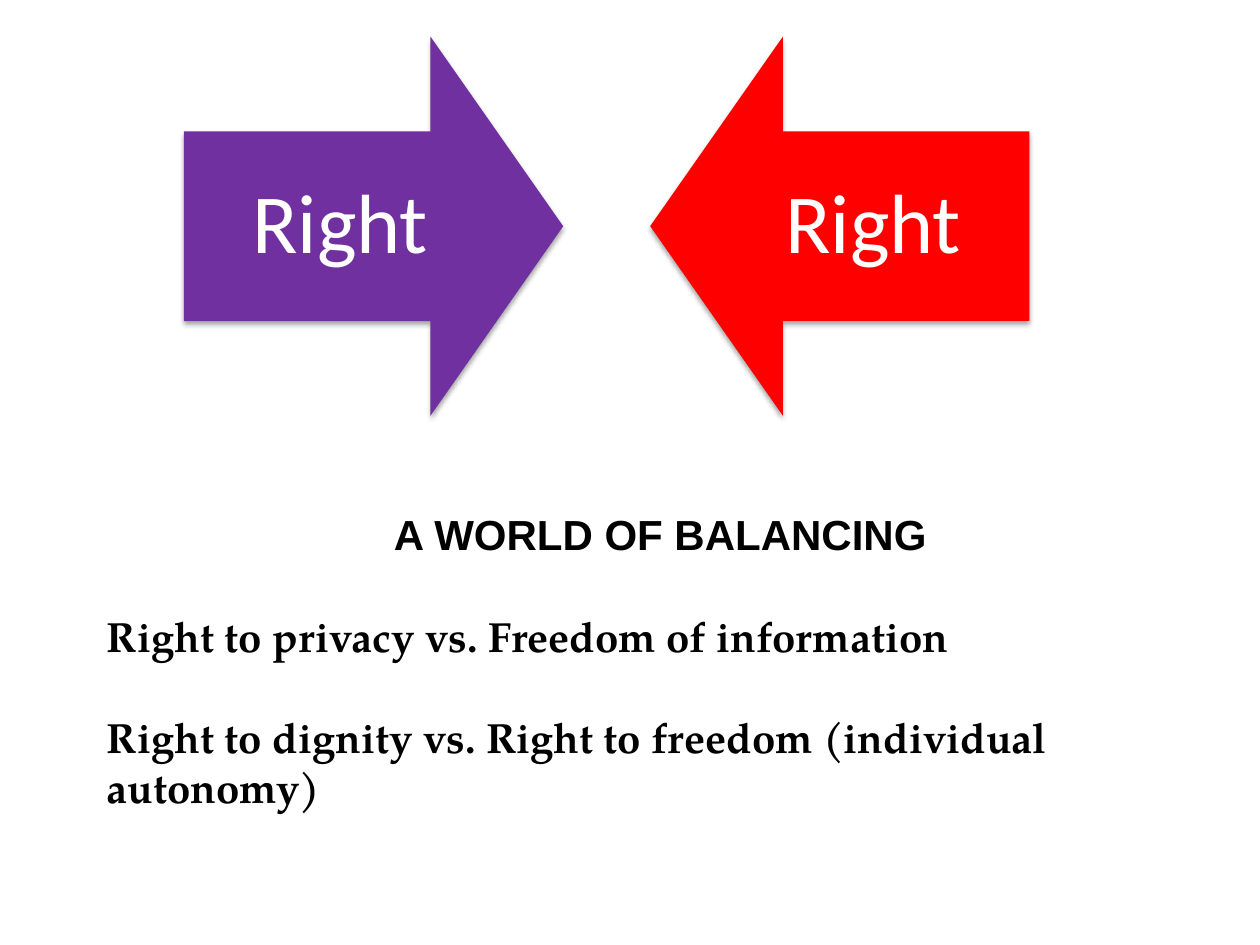
import pptx
import pptx.util
import pptx.dml.color
import pptx.enum.shapes
import pptx.enum.text
import pptx.oxml
import pptx.oxml.ns
from pptx.util import Inches

ARROW_SIZE = 3.01
ARROW_TOP = 0.29
LABEL_WIDTH = 2.48
LABEL_HEIGHT = 1.5
ALIGN = pptx.enum.text.PP_ALIGN

SHADOW_XML = (
    f'<a:effectLst {pptx.oxml.ns.nsdecls("a")}>'
    '<a:outerShdw blurRad="39400" dist="22900" dir="5400000" rotWithShape="0">'
    '<a:srgbClr val="000000"><a:alpha val="35000"/></a:srgbClr>'
    '</a:outerShdw></a:effectLst>'
)


def color(value):
    return pptx.dml.color.RGBColor.from_string(value)


def format_paragraph(paragraph, font, size, text_color, alignment, bold=False):
    paragraph.alignment = alignment
    for run in paragraph.runs:
        run.font.name = font
        run.font.size = pptx.util.Pt(size)
        run.font.bold = bold
        run.font.color.rgb = color(text_color)


def add_arrow(slide, left, rotation, fill):
    shape = slide.shapes.add_shape(
        pptx.enum.shapes.MSO_SHAPE.DOWN_ARROW,
        Inches(left), Inches(ARROW_TOP), Inches(ARROW_SIZE), Inches(ARROW_SIZE))
    shape.rotation = rotation
    shape.adjustments[0] = 0.5
    shape.adjustments[1] = 0.35
    shape.fill.solid()
    shape.fill.fore_color.rgb = color(fill)
    shape.line.fill.background()
    # Soft shadow that always falls downwards
    shape._element.spPr.append(pptx.oxml.parse_xml(SHADOW_XML))


def add_arrow_label(slide, left, text):
    top = ARROW_TOP + (ARROW_SIZE - LABEL_HEIGHT) / 2
    box = slide.shapes.add_textbox(
        Inches(left), Inches(top), Inches(LABEL_WIDTH), Inches(LABEL_HEIGHT))
    frame = box.text_frame
    frame.word_wrap = True
    frame.vertical_anchor = pptx.enum.text.MSO_ANCHOR.MIDDLE
    frame.margin_left = frame.margin_right = Inches(0.37)
    frame.margin_top = frame.margin_bottom = Inches(0.37)
    frame.text = text
    paragraph = frame.paragraphs[0]
    paragraph.line_spacing = 0.9
    format_paragraph(paragraph, "Calibri", 48, "FFFFFF", ALIGN.CENTER)


def add_balancing_text(slide, heading, examples):
    box = slide.shapes.add_textbox(
        Inches(0.75), Inches(3.99), Inches(8.98), Inches(2.52))
    frame = box.text_frame
    frame.word_wrap = True
    frame.text = heading
    format_paragraph(
        frame.paragraphs[0], "Arial", 24, "000000", ALIGN.CENTER, bold=True)
    for example in examples:
        paragraph = frame.add_paragraph()
        paragraph.text = example
        paragraph.space_before = pptx.util.Pt(29)
        format_paragraph(
            paragraph, "TeX Gyre Pagella", 24, "000000", ALIGN.LEFT, bold=True)


def main():
    presentation = pptx.Presentation()
    presentation.slide_width = Inches(10)
    presentation.slide_height = Inches(7.5)
    slide = presentation.slides.add_slide(presentation.slide_layouts[6])

    # Two opposing arrows, each with its label on the shaft side
    left_arrow, right_arrow = 1.46, 5.16
    add_arrow(slide, left_arrow, 270, "7030A0")
    add_arrow_label(slide, left_arrow, "Right")
    add_arrow(slide, right_arrow, 90, "FF0000")
    add_arrow_label(slide, right_arrow + ARROW_SIZE - LABEL_WIDTH, "Right")

    # Heading and the rights to be balanced
    add_balancing_text(slide, "A WORLD OF BALANCING", [
        "Right to privacy vs. Freedom of information",
        "Right to dignity vs. Right to freedom (individual autonomy)",
    ])
    presentation.save("out.pptx")


if __name__ == "__main__":
    main()
